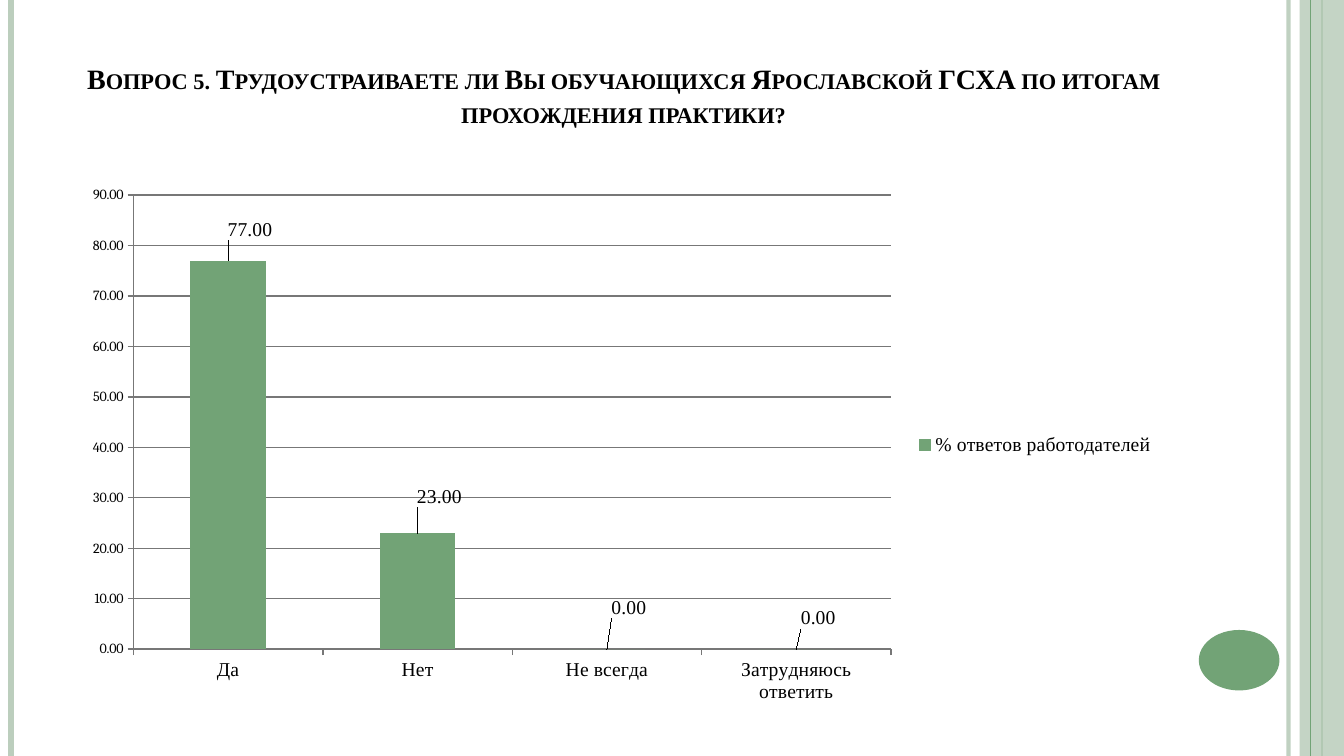
from lxml import etree
from pptx import Presentation, util as u
from pptx.chart.data import CategoryChartData
from pptx.dml.color import RGBColor
from pptx.enum import chart as ch, shapes, text
from pptx.oxml import parse_xml
from pptx.oxml.ns import nsdecls, qn

GREEN = RGBColor(0x72, 0xA3, 0x76)
PALE = RGBColor(0xBC, 0xCE, 0xBD)
GREY = RGBColor(0x77, 0x77, 0x77)
BLACK = RGBColor(0, 0, 0)
SERIF = "Times New Roman"

prs = Presentation()
prs.slide_width, prs.slide_height = u.Inches(13.33), u.Inches(7.5)
W, H = prs.slide_width, prs.slide_height
s = prs.slides.add_slide(prs.slide_layouts[6])


def set_alpha(fill_parent, percent):
    color = fill_parent.find(".//" + qn("a:srgbClr"))
    etree.SubElement(color, qn("a:alpha")).set("val", str(percent * 1000))


def add_text(content, left, top, width, height, size=20, font=SERIF, color=BLACK,
             bold=False, cap="none", align=text.PP_ALIGN.CENTER):
    tf = s.shapes.add_textbox(left, top, width, height).text_frame
    tf.word_wrap = True
    tf.vertical_anchor = text.MSO_ANCHOR.BOTTOM
    p = tf.paragraphs[0]
    p.alignment = align
    r = p.add_run()
    r.text = content
    r.font.size, r.font.name, r.font.bold = u.Pt(size), font, bold
    r.font.color.rgb = color
    r._r.get_or_add_rPr().set("cap", cap)


# Side stripes and band, from back to front: x, line width, colour, opacity
stripes = [(12.78, 3, PALE, 93), (0.11, 4.5, PALE, 100),
           (13.11, 1.5, GREEN, 100), (13, 0.75, GREEN, 100)]
for x, weight, color, opacity in stripes:
    if x == 13:
        band = s.shapes.add_shape(shapes.MSO_SHAPE.RECTANGLE, u.Inches(12.89), 0,
                                  W - u.Inches(12.89), H)
        band.shadow.inherit = False
        band.fill.solid()
        band.fill.fore_color.rgb = PALE
        band.line.fill.background()
        set_alpha(band._element.spPr, 87)
    line = s.shapes.add_connector(shapes.MSO_CONNECTOR.STRAIGHT,
                                  u.Inches(x), 0, u.Inches(x), H)
    line.line.color.rgb, line.line.width = color, u.Pt(weight)
    if opacity < 100:
        set_alpha(line._element.spPr, opacity)
    etree.SubElement(line._element.spPr, qn("a:effectLst"))

# Page number badge
badge = s.shapes.add_shape(shapes.MSO_SHAPE.OVAL, u.Inches(11.89), u.Inches(6.25),
                           u.Inches(0.8), u.Inches(0.6))
badge.shadow.inherit = False
badge.fill.solid()
badge.fill.fore_color.rgb = GREEN
badge.line.fill.background()

# Title
add_text("Вопрос 5. Трудоустраиваете ли Вы обучающихся Ярославской ГСХА "
         "по итогам прохождения практики?",
         u.Inches(0.74), 0, u.Inches(10.89), u.Inches(1.33), bold=True, cap="small")

# Chart
data = CategoryChartData(number_format="0.00")
data.categories = ["Да", "Нет", "Не всегда", "Затрудняюсь ответить"]
data.add_series("% ответов работодателей", [77, 23, 0, 0])
chart = s.shapes.add_chart(ch.XL_CHART_TYPE.COLUMN_CLUSTERED, u.Inches(0.67), u.Inches(1.75),
                           u.Inches(10.89), u.Inches(5.33), data).chart
chart.has_title = False
chart.font.size, chart.font.name = u.Pt(10), "Cambria"
chart.font.color.rgb = BLACK
chart.has_legend = True
chart.legend.position = ch.XL_LEGEND_POSITION.RIGHT
chart.legend.include_in_layout = False

# Axes
cat, val = chart.category_axis, chart.value_axis
val.minimum_scale, val.maximum_scale, val.major_unit = 0, 90, 10
val.has_major_gridlines = True
val.tick_labels.number_format = "0.00"
val.tick_labels.number_format_is_linked = False
for axis in (cat, val):
    axis.major_tick_mark = ch.XL_TICK_MARK.OUTSIDE
for fmt in (cat.format, val.format, val.major_gridlines.format):
    fmt.line.color.rgb, fmt.line.width = GREY, u.Pt(1)

# Columns and their shifted labels
plot = chart.plots[0]
plot.vary_by_categories = False
plot.gap_width = 150
columns = plot.series[0]
columns.format.fill.solid()
columns.format.fill.fore_color.rgb = GREEN
labels = columns.data_labels
labels.show_value = True
labels.number_format, labels.number_format_is_linked = "0.00", False
shifts = [(0.02, -0.03), (0.02, -0.04), (0.02, -0.05), (0.02, -0.03)]
point_labels = [columns.points[i].data_label for i in range(len(shifts))]
for label, (dx, dy) in zip(point_labels, shifts):
    label.position = ch.XL_LABEL_POSITION.OUTSIDE_END
    label._get_or_add_dLbl().insert(1, parse_xml(
        f'<c:layout {nsdecls("c")}><c:manualLayout>'
        f'<c:x val="{dx}"/><c:y val="{dy}"/></c:manualLayout></c:layout>'))

for font in [cat.tick_labels.font, chart.legend.font, labels.font,
             *(label.font for label in point_labels)]:
    font.size, font.name = u.Pt(14), SERIF
    font.color.rgb = BLACK

# Inner plot area, as shares of the chart
area = chart._chartSpace.chart.plotArea
for old in area.findall(qn("c:layout")):
    area.remove(old)
area.insert(0, parse_xml(
    f'<c:layout {nsdecls("c")}><c:manualLayout><c:layoutTarget val="inner"/>'
    '<c:xMode val="edge"/><c:yMode val="edge"/><c:x val="0.06"/><c:y val="0.035"/>'
    '<c:w val="0.69"/><c:h val="0.845"/></c:manualLayout></c:layout>'))

prs.save("out.pptx")
